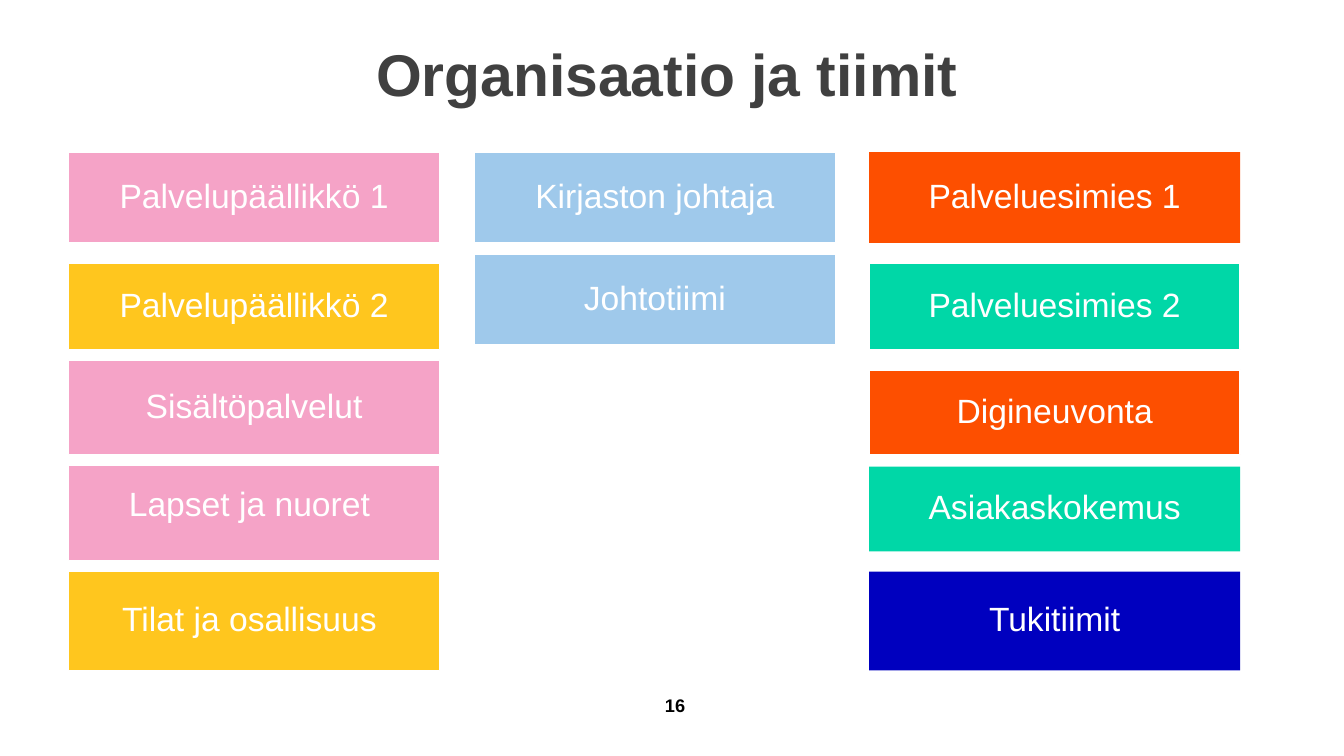
from pptx import Presentation
from pptx import util as u
from pptx.dml.color import RGBColor
from pptx.enum import shapes, text

PX = u.Inches(1) // 100
PINK, YELLOW, SKY = "F5A3C7", "FFC61E", "9FC9EB"
ORANGE, GREEN, BLUE, WHITE = "FD4F00", "00D7A7", "0000BF", "FFFFFF"

# Each column: left, width, then teams as (label, top, height, fill, outlined)
COLUMNS = [
    (68, 368, [
        ("Palvelupäällikkö 1", 151, 90, PINK, True),
        ("Palvelupäällikkö 2", 261, 86, YELLOW, True),
        ("Sisältöpalvelut", 357, 94, PINK, True),
        ("Lapset ja nuoret ", 462, 94, PINK, True),
        ("Tilat ja osallisuus ", 567, 98, YELLOW, True),
    ]),
    (470, 359, [
        ("Kirjaston johtaja", 151, 90, SKY, True),
        ("Johtotiimi", 252, 90, SKY, True),
    ]),
    (862, 368, [
        ("Palveluesimies 1", 151, 90, ORANGE, False),
        ("Palveluesimies 2", 261, 86, GREEN, True),
        ("Digineuvonta", 367, 84, ORANGE, True),
        ("Asiakaskokemus", 463, 84, GREEN, False),
        ("Tukitiimit", 567, 98, BLUE, False),
    ]),
]


def color(hex_code):
    return RGBColor.from_string(hex_code)


def box(left, top, width, height):
    return [side * PX for side in (left, top, width, height)]


def write(shape, words, size, hex_code, bold=False, inset=0,
          anchor=text.MSO_ANCHOR.MIDDLE, spacing=1.0):
    frame = shape.text_frame
    frame.text = words
    frame.word_wrap = True
    frame.auto_size = text.MSO_AUTO_SIZE.NONE
    frame.vertical_anchor = anchor
    frame.margin_left = frame.margin_right = inset * PX
    frame.margin_top = frame.margin_bottom = inset * PX
    paragraph = frame.paragraphs[0]
    paragraph.alignment = text.PP_ALIGN.CENTER
    paragraph.line_spacing = spacing
    for run in paragraph.runs:
        run.font.name = "Arial"
        run.font.size = u.Pt(size)
        run.font.bold = bold
        run.font.color.rgb = color(hex_code)


def add_title(slide, words):
    title = slide.shapes.title
    title.left, title.top, title.width, title.height = box(50, 45, 1223, 86)
    write(title, words, 42, "404040", bold=True,
          anchor=text.MSO_ANCHOR.TOP, spacing=0.9)


def add_team(slide, label, place, fill, outlined):
    team = slide.shapes.add_shape(shapes.MSO_SHAPE.RECTANGLE, *place)
    team.shadow.inherit = False
    team.fill.solid()
    team.fill.fore_color.rgb = color(fill)
    if outlined:
        team.line.color.rgb = color(WHITE)
        team.line.width = u.Pt(1)
    else:
        team.line.fill.background()
    write(team, label, 24, WHITE, inset=7, spacing=0.9)
    return team


def add_page_number(slide, number):
    write(slide.shapes.add_textbox(*box(602, 686, 135, 28)),
          number, 13, "000000", bold=True)


def main():
    deck = Presentation()
    deck.slide_width, deck.slide_height = u.Inches(13.33), u.Inches(7.5)
    slide = deck.slides.add_slide(deck.slide_layouts[5])
    add_title(slide, "Organisaatio ja tiimit")
    for left, width, teams in COLUMNS:
        for label, top, height, fill, outlined in teams:
            team = add_team(slide, label, box(left, top, width, height),
                            fill, outlined)
            if label.startswith("Lapset"):
                # This label sits a little above the middle of its box
                team.text_frame.margin_bottom = 21 * PX
    add_page_number(slide, "16")
    deck.save("out.pptx")


if __name__ == "__main__":
    main()
